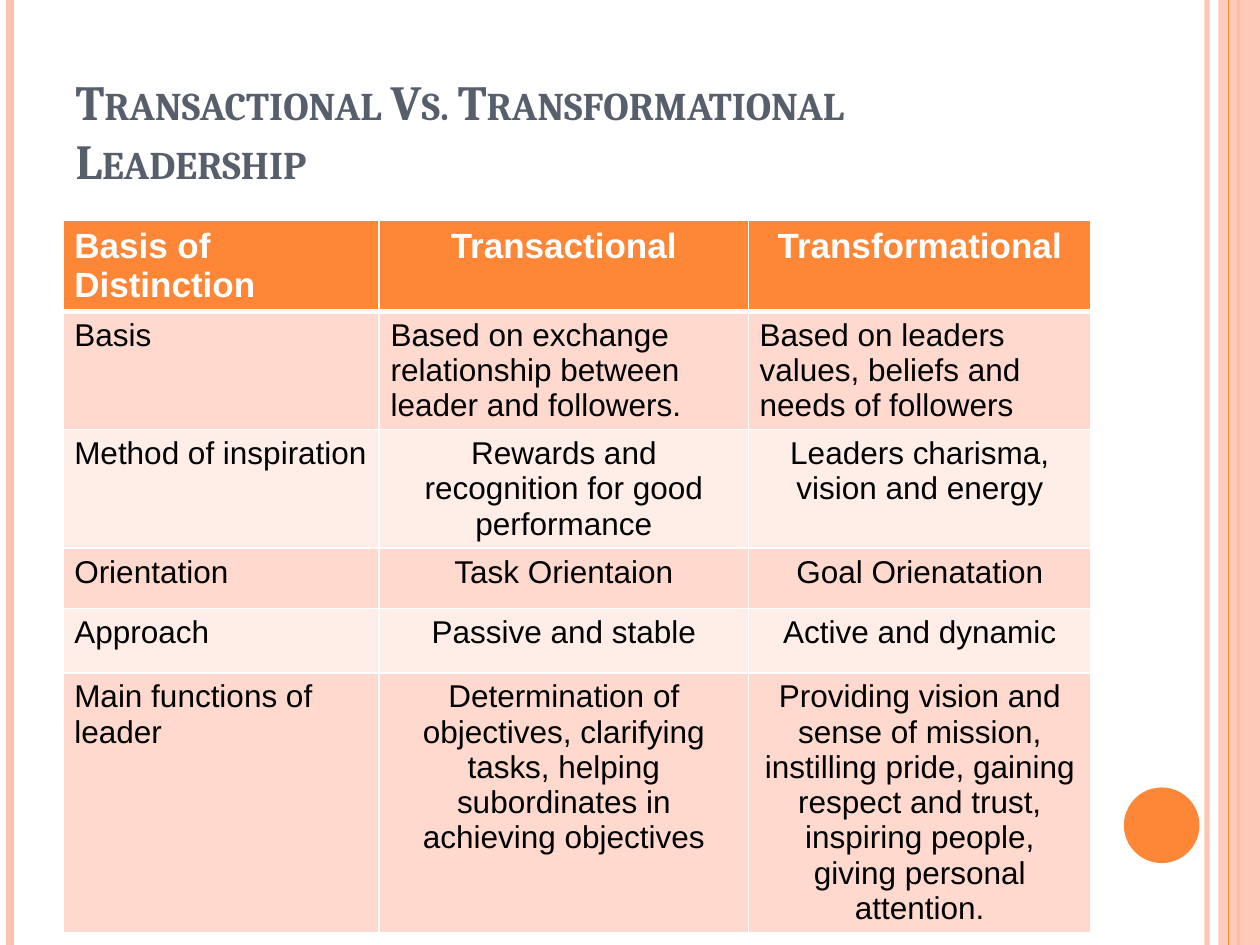
from pptx import Presentation
from pptx.dml.color import RGBColor
from pptx.enum.shapes import MSO_CONNECTOR, MSO_SHAPE
from pptx.enum.text import MSO_ANCHOR, MSO_AUTO_SIZE, PP_ALIGN
from pptx.oxml.ns import qn
from pptx.util import Inches, Pt
from lxml.etree import SubElement, Element

COLORS = {
    "orange": "FE8637", "peach": "FEC3AE", "slate": "575F6D",
    "band_dark": "FFD9CE", "band_light": "FFEDE8",
    "white": "FFFFFF", "black": "000000",
}
LEFT, CENTER = PP_ALIGN.LEFT, PP_ALIGN.CENTER

# Vertical rules: x, colour, width in points, opacity in percent
RULES = [
    (9.58, "peach", 3, 93),
    (0.08, "peach", 4.5, 100),
    (9.83, "orange", 1.5, 100),
]
INNER_RULE = (9.75, "orange", 0.75, 100)

COL_WIDTHS = [2.51, 2.93, 2.72]
ROW_HEIGHTS = [0.69, 0.69, 0.69, 0.48, 0.51, 0.69]
ROWS = [
    ("Basis of Distinction", "Transactional", "Transformational"),
    ("Basis", "Based on exchange relationship between leader and followers.",
     "Based on leaders values, beliefs and needs of followers"),
    ("Method of inspiration", "Rewards and recognition for good performance",
     "Leaders charisma, vision and energy"),
    ("Orientation", "Task Orientaion", "Goal Orienatation"),
    ("Approach", "Passive and stable", "Active and dynamic"),
    ("Main functions of leader",
     "Determination of objectives, clarifying tasks, helping subordinates "
     "in achieving objectives",
     "Providing vision and sense of mission, instilling pride, gaining respect "
     "and trust, inspiring people, giving personal attention."),
]


def rgb(name):
    return RGBColor.from_string(COLORS[name])


def set_alpha(parent, percent):
    """Make the solid colour inside parent partly transparent."""
    if percent < 100:
        color = parent.find(".//" + qn("a:srgbClr"))
        SubElement(color, qn("a:alpha"), val=str(percent * 1000))


def write_text(tf, text, font="Arial", size=18, color="black", bold=False,
               align=LEFT, small_caps=False):
    p = tf.paragraphs[0]
    p.alignment = align
    for i, line in enumerate(text.split("\n")):
        if i:
            p.add_line_break()
        r = p.add_run()
        r.text = line
        r.font.name, r.font.size, r.font.bold = font, Pt(size), bold
        r.font.color.rgb = rgb(color)
        if small_caps:
            r.font._element.set("cap", "small")


def add_rule(slide, x, color, width, opacity):
    ln = slide.shapes.add_connector(
        MSO_CONNECTOR.STRAIGHT, Inches(x), 0, Inches(x), Inches(7.5))
    ln.line.color.rgb = rgb(color)
    ln.line.width = Pt(width)
    set_alpha(ln._element.spPr, opacity)
    SubElement(ln._element.spPr, qn("a:effectLst"))


def add_filled(slide, kind, x, y, w, h, color, opacity=100):
    sp = slide.shapes.add_shape(kind, Inches(x), Inches(y), Inches(w), Inches(h))
    sp.shadow.inherit = False
    sp.fill.solid()
    sp.fill.fore_color.rgb = rgb(color)
    set_alpha(sp._element.spPr, opacity)
    sp.line.fill.background()


def set_borders(cell, **widths):
    """Draw white borders; they must precede the fill in the cell properties."""
    tc_pr = cell._tc.get_or_add_tcPr()
    for i, side in enumerate("LRTB"):
        width = Pt(widths.get(side, 1))
        ln = Element(qn("a:ln" + side), w=str(int(width)))
        fill = SubElement(ln, qn("a:solidFill"))
        SubElement(fill, qn("a:srgbClr"), val=COLORS["white"])
        tc_pr.insert(i, ln)


def set_title(slide, text):
    title = slide.shapes.title
    title.left, title.top = Inches(0.5), Inches(0.3)
    title.width, title.height = Inches(8.17), Inches(1.25)
    tf = title.text_frame
    tf.word_wrap = True
    tf.auto_size = MSO_AUTO_SIZE.NONE
    tf.vertical_anchor = MSO_ANCHOR.BOTTOM
    write_text(tf, text, font="Cambria", size=28, color="slate", bold=True,
               small_caps=True)


def add_comparison(slide):
    table = slide.shapes.add_table(
        len(ROWS), len(COL_WIDTHS), Inches(0.5), Inches(1.75),
        Inches(sum(COL_WIDTHS)), Inches(sum(ROW_HEIGHTS))).table
    for col, width in zip(table.columns, COL_WIDTHS):
        col.width = Inches(width)
    for i, (row, height) in enumerate(zip(table.rows, ROW_HEIGHTS)):
        row.height = Inches(height)
        header = i == 0
        band = "orange" if header else "band_dark" if i % 2 else "band_light"
        for j, cell in enumerate(row.cells):
            cell.fill.solid()
            cell.fill.fore_color.rgb = rgb(band)
            cell.margin_left = cell.margin_right = Inches(0.09)
            cell.margin_top = cell.margin_bottom = Inches(0.05)
            set_borders(cell, B=3 if header else 1, T=3 if i == 1 else 1)
            # The first column and the "Basis" row are left-aligned
            write_text(cell.text_frame, ROWS[i][j], size=20 if header else 18,
                       color="white" if header else "black", bold=header,
                       align=LEFT if j == 0 or i == 1 else CENTER)


def main():
    prs = Presentation()
    prs.slide_width, prs.slide_height = Inches(10), Inches(7.5)
    slide = prs.slides.add_slide(prs.slide_layouts[5])

    # Side decoration
    for rule in RULES:
        add_rule(slide, *rule)
    add_filled(slide, MSO_SHAPE.RECTANGLE, 9.67, 0, 0.33, 7.5, "peach", 87)
    add_rule(slide, *INNER_RULE)
    add_filled(slide, MSO_SHAPE.OVAL, 8.92, 6.25, 0.6, 0.6, "orange")

    # Content
    set_title(slide, "Transactional Vs. Transformational\nLeadership")
    add_comparison(slide)
    prs.save("out.pptx")


if __name__ == "__main__":
    main()
